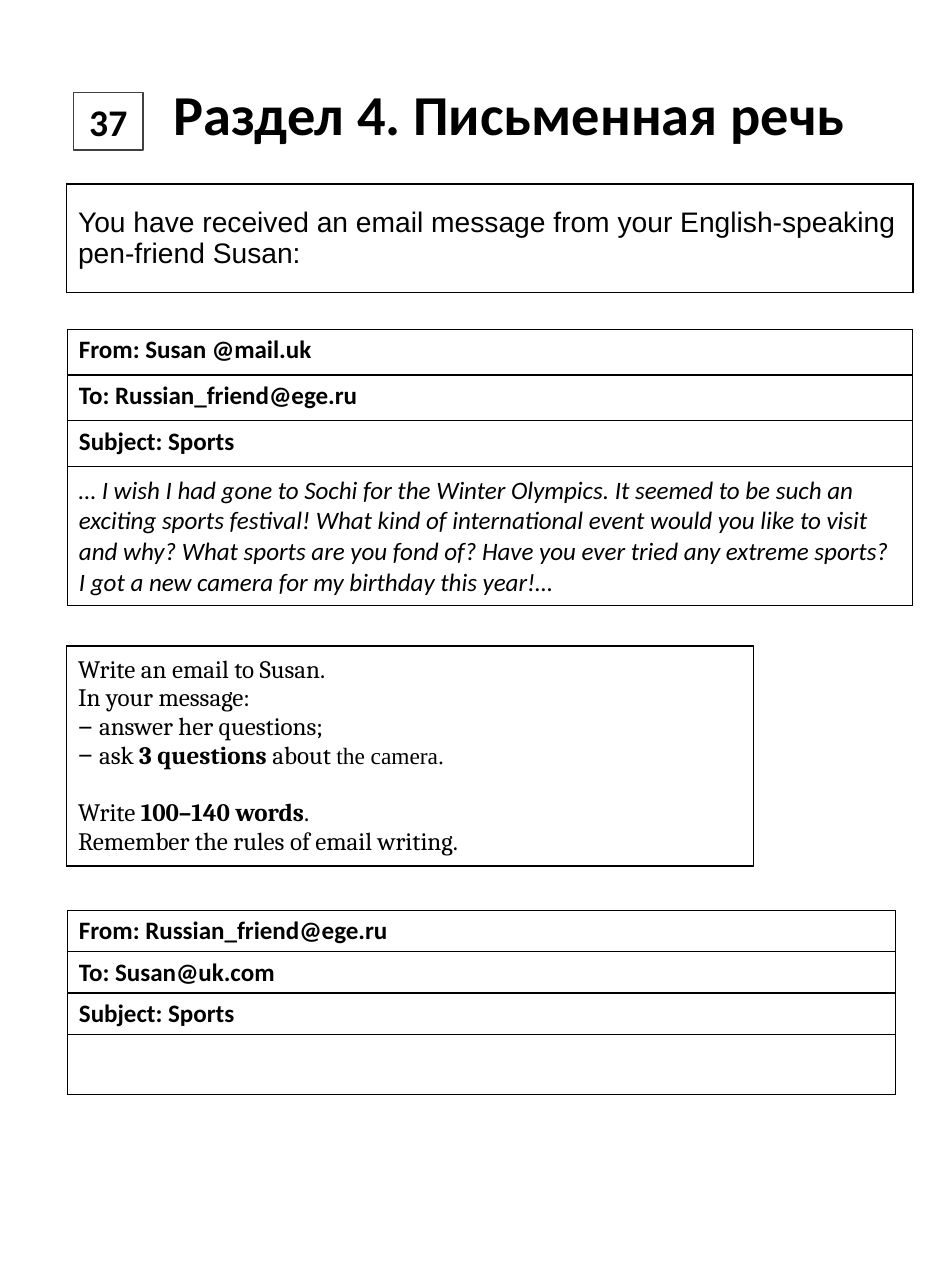
"""Build an exam worksheet page with an email writing task."""
from dataclasses import dataclass

import lxml.etree
import pptx
import pptx.dml.color
import pptx.enum.shapes
import pptx.enum.text
import pptx.oxml
import pptx.oxml.ns
import pptx.util

Pt = pptx.util.Pt
Align = pptx.enum.text.PP_ALIGN
Anchor = pptx.enum.text.MSO_ANCHOR
qn = pptx.oxml.ns.qn

BLACK = pptx.dml.color.RGBColor(0x00, 0x00, 0x00)
WHITE = pptx.dml.color.RGBColor(0xFF, 0xFF, 0xFF)
GREY = pptx.dml.color.RGBColor(0x40, 0x40, 0x40)
DASH_INDENT = 13.4


@dataclass(frozen=True)
class Span:
    text: str
    font: str = "Calibri"
    size: float = 16
    bold: bool = False
    italic: bool = False


@dataclass(frozen=True)
class Para:
    spans: tuple[Span, ...]
    dashed: bool = False
    space_before: float = 0


@dataclass(frozen=True)
class Row:
    height: float
    paras: tuple[Para, ...] = ()
    anchor: Anchor = Anchor.TOP
    inset: float = 3.6


@dataclass(frozen=True)
class Panel:
    left: float
    top: float
    width: float
    rows: tuple[Row, ...]


def header(text: str, height: float) -> Row:
    return Row(height, (Para((Span(text, bold=True),)),))


def cambria(text: str, bold: bool = False) -> Span:
    return Span(text, "Cambria", bold=bold)


def add_line(parent, tag: str, width: float, colour) -> None:
    line = lxml.etree.SubElement(parent, qn(tag), w=str(Pt(width)))
    fill = lxml.etree.SubElement(line, qn("a:solidFill"))
    lxml.etree.SubElement(fill, qn("a:srgbClr"), val=str(colour))


def add_dash(para) -> None:
    properties = para._p.get_or_add_pPr()
    properties.set("marL", str(Pt(DASH_INDENT)))
    properties.set("indent", str(-Pt(DASH_INDENT)))
    lxml.etree.SubElement(properties, qn("a:buFont"), typeface="Arial")
    lxml.etree.SubElement(properties, qn("a:buChar"), char="−")


def add_span(para, span: Span):
    run = para.add_run()
    run.text = span.text
    run.font.name = span.font
    run.font.size = Pt(span.size)
    run.font.bold = span.bold
    run.font.italic = span.italic
    run.font.color.rgb = BLACK
    return run


def write(frame, paras: tuple[Para, ...]) -> None:
    for index, item in enumerate(paras):
        para = frame.add_paragraph() if index else frame.paragraphs[0]
        if item.dashed:
            add_dash(para)
        if item.space_before:
            para.space_before = Pt(item.space_before)
        for span in item.spans:
            add_span(para, span)


def add_panel(page, panel: Panel) -> None:
    height = sum(row.height for row in panel.rows)
    table = page.shapes.add_table(len(panel.rows), 1, Pt(panel.left), Pt(panel.top),
                                  Pt(panel.width), Pt(height)).table
    table.first_row = table.horz_banding = False
    for index, row in enumerate(panel.rows):
        table.rows[index].height = Pt(row.height)
        cell = table.cell(index, 0)
        cell.vertical_anchor = row.anchor
        cell.margin_top = cell.margin_bottom = Pt(row.inset)
        for side in ("a:lnL", "a:lnR", "a:lnT", "a:lnB"):
            add_line(cell._tc.get_or_add_tcPr(), side, 1, BLACK)
        cell.fill.background()
        write(cell.text_frame, row.paras)


def add_title(page) -> None:
    title = page.shapes.title
    title.left, title.top, title.width, title.height = Pt(101.5), Pt(46.8), Pt(447), Pt(51)
    frame = title.text_frame
    frame.word_wrap = False
    frame.auto_size = pptx.enum.text.MSO_AUTO_SIZE.SHAPE_TO_FIT_TEXT
    frame.vertical_anchor = Anchor.TOP
    para = frame.paragraphs[0]
    para.alignment = Align.CENTER
    run = add_span(para, Span("Раздел 4. Письменная речь", size=36, bold=True))
    properties = run._r.get_or_add_rPr()
    add_line(properties, "a:ln", 0.75, WHITE)
    properties.insert(0, properties[-1])


def add_task_number(page) -> None:
    box = page.shapes.add_shape(pptx.enum.shapes.MSO_SHAPE.RECTANGLE,
                                Pt(46.8), Pt(59), Pt(44.6), Pt(36.7))
    box.shadow.inherit = False
    box.fill.solid()
    box.fill.fore_color.rgb = WHITE
    box.line.color.rgb = GREY
    box.line.width = Pt(1)
    box.text_frame.vertical_anchor = Anchor.MIDDLE
    para = box.text_frame.paragraphs[0]
    para.alignment = Align.CENTER
    add_span(para, Span("37", size=24, bold=True))


SITUATION = Para((Span("You have received an email message from your English-speaking "
                       "pen-friend Susan:", "Arial", 18),))
LETTER = (
    Para((Span("… I wish I had gone to Sochi for the Winter Olympics. It seemed to be such an "
               "exciting sports festival! What kind of international event would you like to "
               "visit and why? What sports are you fond of? Have you ever tried any extreme "
               "sports?", italic=True),)),
    Para((Span("I got a new camera for my birthday this year!…", italic=True),)),
)
TASK = (
    Para((cambria("Write an email to Susan."),)),
    Para((cambria("In your message:"),)),
    Para((cambria("answer her questions;"),), dashed=True),
    Para((cambria("ask "), cambria("3 questions ", True), cambria("about "),
          Span("the camera.", "Times New Roman", 14.9)), dashed=True),
    Para((cambria("Write "), cambria("100–140 words", True), cambria(".")), space_before=18),
    Para((cambria("Remember the rules of email writing."),)),
)
RECEIVED = ("From: Susan @mail.uk", "To: Russian_friend@ege.ru", "Subject: Sports")
REPLY = ("From: Russian_friend@ege.ru", "To: Susan@uk.com", "Subject: Sports")
PANELS = (
    Panel(42.6, 117.4, 540, (Row(69.5, (SITUATION,), Anchor.MIDDLE),)),
    Panel(43.2, 210.2, 539.3, (*(header(text, 29.2) for text in RECEIVED),
                               Row(88.6, LETTER, Anchor.MIDDLE, 5.76))),
    Panel(42.6, 412.4, 438.5, (Row(140.2, TASK, Anchor.MIDDLE),)),
    Panel(43.2, 581.2, 528.5, (*(header(text, 26.4) for text in REPLY), Row(38.2))),
)


def main() -> None:
    deck = pptx.Presentation()
    deck.slide_width, deck.slide_height = Pt(595.44), Pt(822.24)
    page = deck.slides.add_slide(deck.slide_layouts[5])
    add_title(page)
    add_task_number(page)
    for panel in PANELS:
        add_panel(page, panel)
    deck.save("out.pptx")


if __name__ == "__main__":
    main()
